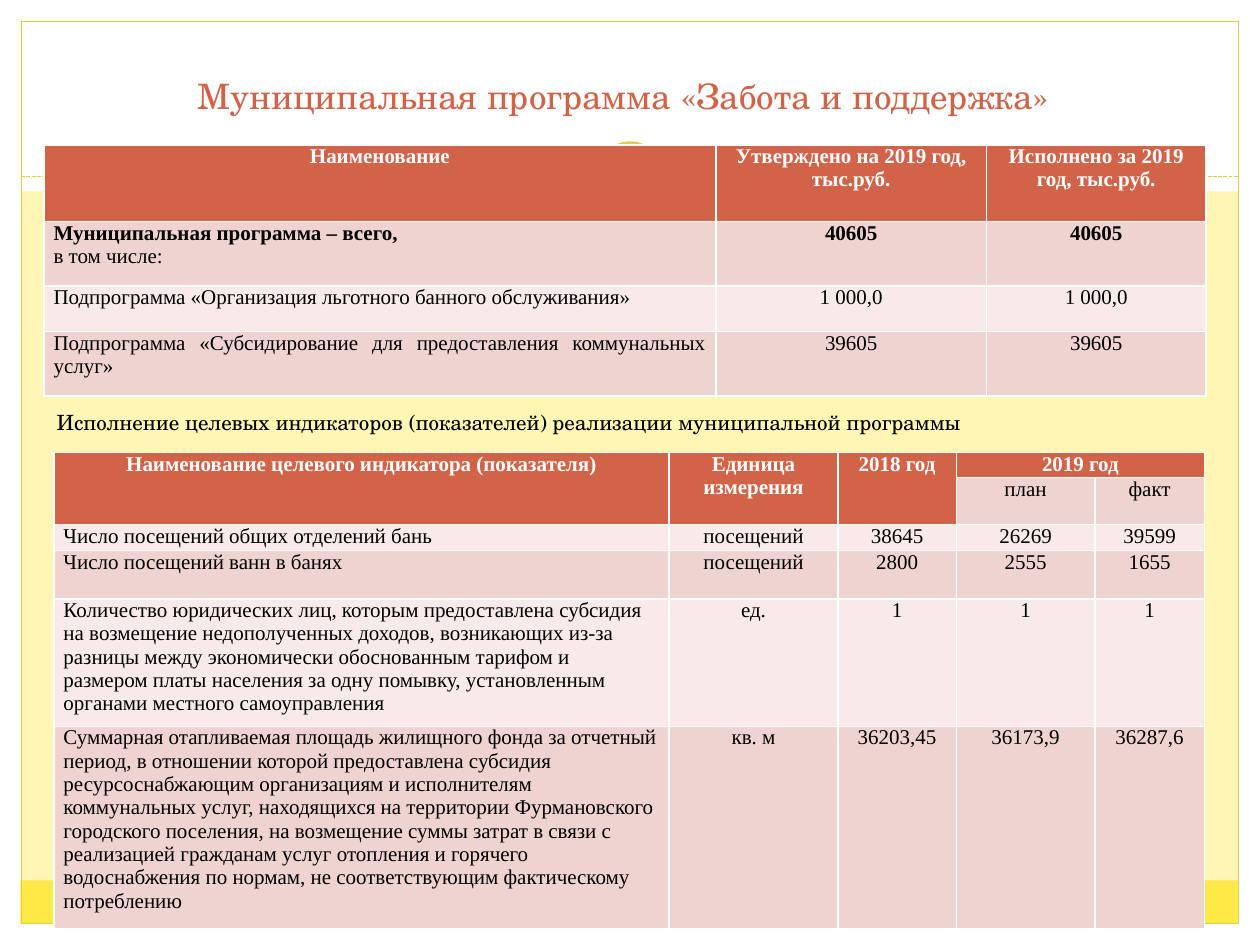
from lxml.etree import SubElement
from pptx import Presentation
from pptx.dml.color import RGBColor
from pptx.enum.dml import MSO_LINE
from pptx.enum.shapes import MSO_CONNECTOR as Connector, MSO_SHAPE as Shape
from pptx.enum.text import MSO_ANCHOR as Anchor, MSO_AUTO_SIZE as AutoSize, PP_ALIGN as Align
from pptx.oxml.ns import qn
from pptx.util import Cm, Pt

WHITE, BLACK = "FFFFFF", "000000"
RED, PINK, PALE_PINK = "D16349", "EED3D0", "F7EAE9"
YELLOW, PALE_YELLOW, GOLD = "FFE947", "FFF6B5", "E1CE3F"
HEADING_FONT, TABLE_FONT = "TeX Gyre Schola", "Times New Roman"

PANELS = [
    (0, 18.62, 25.4, 0.43, WHITE),
    (0, 0, 25.4, 3.86, WHITE),
    (0, 0, 0.43, 19.05, WHITE),
    (24.97, 0, 0.43, 19.05, WHITE),
    (0.41, 17.75, 24.54, 0.87, YELLOW),
]

BUDGET = [
    ["Наименование", "Утверждено на 2019 год, тыс.руб.", "Исполнено за 2019 год, тыс.руб."],
    ["Муниципальная программа – всего,\nв том числе:", "40605", "40605"],
    ["Подпрограмма «Организация льготного банного обслуживания»", "1 000,0", "1 000,0"],
    ["Подпрограмма «Субсидирование для предоставления коммунальных услуг»", "39605", "39605"],
]

INDICATORS = [
    ["Наименование целевого индикатора (показателя)", "Единица измерения", "2018 год",
     "2019 год", None],
    [None, None, None, "план", "факт"],
    ["Число посещений общих отделений бань", "посещений", "38645", "26269", "39599"],
    ["Число посещений ванн в банях", "посещений", "2800", "2555", "1655"],
    ["Количество юридических лиц, которым предоставлена субсидия на возмещение "
     "недополученных доходов, возникающих из-за разницы между экономически обоснованным "
     "тарифом и размером платы населения за одну помывку, установленным органами местного "
     "самоуправления", "ед.", "1", "1", "1"],
    ["Суммарная отапливаемая площадь жилищного фонда за отчетный период, в отношении которой "
     "предоставлена субсидия ресурсоснабжающим организациям и исполнителям коммунальных услуг, "
     "находящихся на территории Фурмановского городского поселения, на возмещение суммы затрат "
     "в связи с реализацией гражданам услуг отопления и горячего водоснабжения по нормам, не "
     "соответствующим фактическому потреблению", "кв. м", "36203,45", "36173,9", "36287,6"],
]


def color(value):
    return RGBColor.from_string(value)


def set_attributes(target, values):
    for name, value in values.items():
        setattr(target, name, value)


def format_font(font, name, size, hex_color, bold=False):
    set_attributes(font, {"name": name, "size": Pt(size), "bold": bold})
    font.color.rgb = color(hex_color)


def add_panel(slide, kind, box, fill=None, line=None, width=0.75):
    shape = slide.shapes.add_shape(kind, *map(Cm, box))
    shape.shadow.inherit = False
    if fill:
        shape.fill.solid()
        shape.fill.fore_color.rgb = color(fill)
    else:
        shape.fill.background()
    if line:
        shape.line.color.rgb = color(line)
        shape.line.width = Pt(width)
    else:
        shape.line.fill.background()


def add_dashed_line(slide, left, right, top):
    line = slide.shapes.add_connector(Connector.STRAIGHT, Cm(left), Cm(top), Cm(right), Cm(top))
    set_attributes(line.line, {"width": Pt(0.75), "dash_style": MSO_LINE.SQUARE_DOT})
    line.line.color.rgb = color(GOLD)
    SubElement(line.element.spPr, qn("a:effectLst"))


def add_decoration(slide):
    slide.background.fill.solid()
    slide.background.fill.fore_color.rgb = color(PALE_YELLOW)
    for *box, fill in PANELS:
        add_panel(slide, Shape.RECTANGLE, box, fill)
    add_panel(slide, Shape.RECTANGLE, (0.43, 0.43, 24.54, 18.19), line=GOLD)
    add_dashed_line(slide, 0.43, 24.97, 3.56)
    add_panel(slide, Shape.OVAL, (11.86, 2.67, 1.7, 1.7), WHITE)
    add_panel(slide, Shape.OVAL, (12.12, 2.92, 1.17, 1.17), WHITE, GOLD, 4)


def fill_placeholder(shape, text, box, size, hex_color, anchor):
    """Place the text and bring the placeholder to the front."""
    set_attributes(shape, dict(zip(("left", "top", "width", "height"), map(Cm, box))))
    frame = shape.text_frame
    frame.text = text
    set_attributes(frame, {"vertical_anchor": anchor, "auto_size": AutoSize.NONE,
                           "word_wrap": True})
    paragraph = frame.paragraphs[0]
    format_font(paragraph.runs[0].font, HEADING_FONT, size, hex_color)
    shape.element.getparent().append(shape.element)
    return paragraph


def remove_bullet(paragraph):
    properties = paragraph._p.get_or_add_pPr()
    properties.set("marL", str(Cm(0.76)))
    properties.set("indent", str(-Cm(0.76)))
    SubElement(properties, qn("a:buNone"))


def format_cell(cell, text, fill, align, font_color, bold):
    cell.fill.solid()
    cell.fill.fore_color.rgb = color(fill)
    set_attributes(cell, {"margin_left": Cm(0.19), "margin_right": Cm(0.19),
                          "margin_top": 0, "margin_bottom": 0})
    if text is None:
        return
    cell.text_frame.text = text
    for paragraph in cell.text_frame.paragraphs:
        paragraph.alignment = align
        format_font(paragraph.runs[0].font, TABLE_FONT, 12, font_color, bold)


def add_data_table(slide, data, position, widths, heights, name_align):
    """Add a table whose first row, with any cells merged into it, is the header."""
    box = (*position, sum(widths), sum(heights))
    table = slide.shapes.add_table(len(data), len(widths), *map(Cm, box)).table
    for column, width in zip(table.columns, widths):
        column.width = Cm(width)
    for row, height in zip(table.rows, heights):
        row.height = Cm(height)
    for row_index, texts in enumerate(data):
        for column_index, text in enumerate(texts):
            header = row_index == 0 or text is None
            band = PINK if row_index % 2 else PALE_PINK
            align = Align.CENTER if header or column_index else name_align
            format_cell(table.cell(row_index, column_index), text, RED if header else band,
                        align, WHITE if header else BLACK, header)
    return table


def main():
    presentation = Presentation()
    set_attributes(presentation, {"slide_width": Cm(25.4), "slide_height": Cm(19.05)})
    slide = presentation.slides.add_slide(presentation.slide_layouts[1])
    add_decoration(slide)

    title = fill_placeholder(slide.shapes.title, "Муниципальная программа «Забота и поддержка»",
                             (0.71, 1.12, 23.7, 1.35), 20, RED, Anchor.BOTTOM)
    title.alignment = Align.CENTER

    budget = add_data_table(slide, BUDGET, (0.89, 2.92), (13.54, 5.46, 4.42),
                            (1.55, 1.3, 0.91, 1.3), Align.JUSTIFY)
    for cell in budget.rows[1].cells:
        cell.text_frame.paragraphs[0].runs[0].font.bold = True

    subtitle = fill_placeholder(
        slide.placeholders[1],
        "Исполнение целевых индикаторов (показателей) реализации муниципальной программы",
        (0.89, 8.13, 23.62, 0.99), 12, BLACK, Anchor.TOP)
    remove_bullet(subtitle)

    indicators = add_data_table(slide, INDICATORS, (1.09, 9.12), (12.4, 3.4, 2.39, 2.79, 2.21),
                                (0.51, 0.94, 0.53, 0.97, 2.57, 4.09), Align.LEFT)
    for column in range(3):
        indicators.cell(0, column).merge(indicators.cell(1, column))
    indicators.cell(0, 3).merge(indicators.cell(0, 4))

    presentation.save("out.pptx")


if __name__ == "__main__":
    main()
